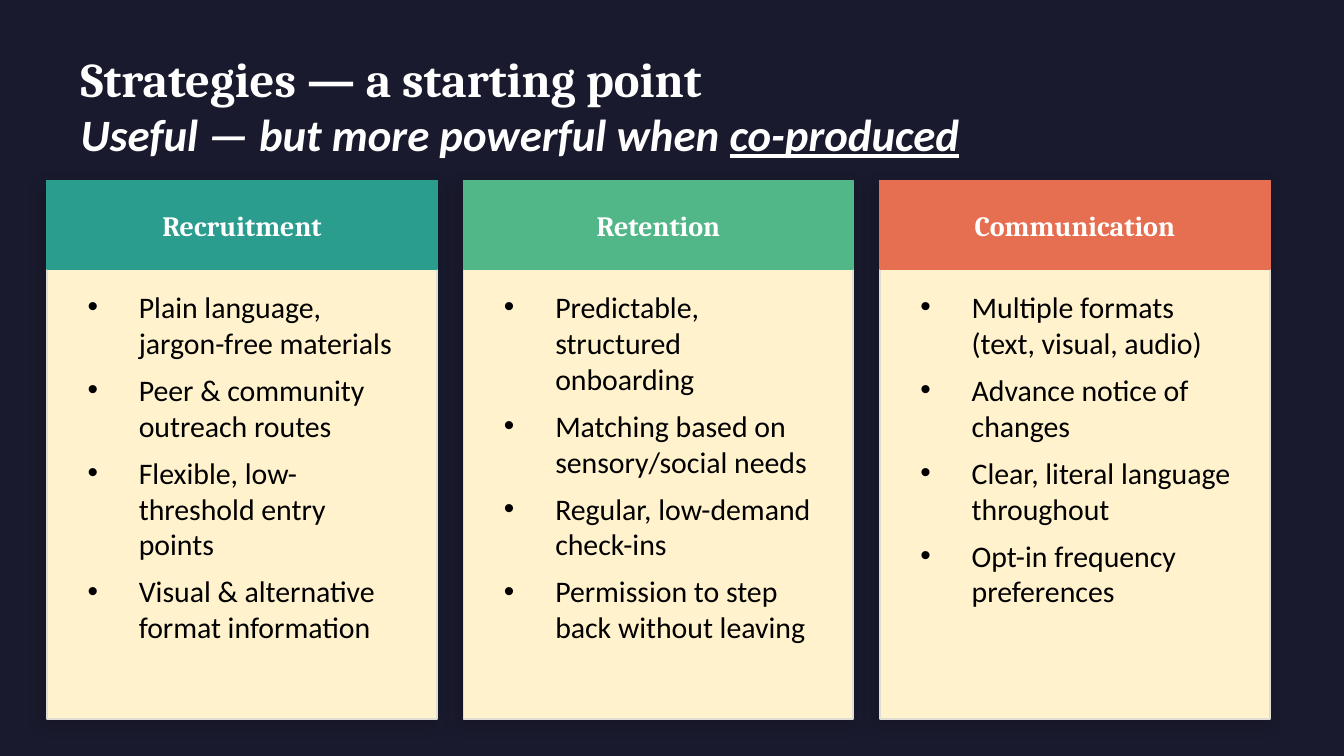
from lxml.etree import SubElement
from pptx import Presentation
from pptx.dml.color import RGBColor
from pptx.enum.shapes import MSO_SHAPE
from pptx.enum.text import MSO_ANCHOR as Anchor, MSO_AUTO_SIZE as AutoSize, PP_ALIGN as Align
from pptx.oxml.ns import qn
from pptx.util import Cm, Pt

STRATEGIES = [
    ("Recruitment", "2A9D8F", [
        "Plain language, jargon-free materials",
        "Peer & community outreach routes",
        "Flexible, low-threshold entry points",
        "Visual & alternative format information",
    ]),
    ("Retention", "52B788", [
        "Predictable, structured onboarding",
        "Matching based on sensory/social needs",
        "Regular, low-demand check-ins",
        "Permission to step back without leaving",
    ]),
    ("Communication", "E76F51", [
        "Multiple formats (text, visual, audio)",
        "Advance notice of changes",
        "Clear, literal language throughout",
        "Opt-in frequency preferences",
    ]),
]


def color(hex_code):
    return RGBColor.from_string(hex_code)


def write(paragraph, text, font="Calibri", size=16, ink="FFFFFF",
          bold=False, italic=False, underline=False, align=Align.LEFT, after=0):
    paragraph.alignment = align
    paragraph.space_before = Pt(0)
    paragraph.space_after = Pt(after)
    run = paragraph.add_run()
    run.text = text
    run.font.name = font
    run.font.size = Pt(size)
    run.font.color.rgb = color(ink)
    run.font.bold = bold
    run.font.italic = italic
    run.font.underline = underline


class StrategySlide:
    """Hold the style and the current slide, and add its elements."""

    heading_font = "Cambria"
    night, cream, edge, ink = "1A1A2E", "FFF2CC", "E0DDD4", "000000"

    def __init__(self, deck):
        self.slide = deck.slides.add_slide(deck.slide_layouts[4])
        self.slide.background.fill.solid()
        self.slide.background.fill.fore_color.rgb = color(self.night)

    def place(self, index, left, top, width, height, anchor):
        holder = next(p for p in self.slide.placeholders
                      if p.placeholder_format.idx == index)
        holder.left, holder.top = Cm(left), Cm(top)
        holder.width, holder.height = Cm(width), Cm(height)
        frame = holder.text_frame
        frame.word_wrap = True
        frame.auto_size = AutoSize.NONE
        frame.vertical_anchor = anchor
        return holder

    def title(self, text):
        holder = self.place(0, 1.27, 0.71, 22.86, 1.52, Anchor.MIDDLE)
        write(holder.text_frame.paragraphs[0], text,
              font=self.heading_font, size=26, bold=True)

    def subtitle(self, lead, stressed):
        holder = self.place(1, 1.27, 2.08, 22.86, 0.89, Anchor.MIDDLE)
        line = holder.text_frame.paragraphs[0]
        write(line, lead, size=24, bold=True, italic=True)
        write(line, stressed, size=24, bold=True, italic=True, underline=True)

    def panel(self, left, top, width, height, fill, outline):
        panel = self.slide.shapes.add_shape(
            MSO_SHAPE.RECTANGLE, Cm(left), Cm(top), Cm(width), Cm(height))
        panel.fill.solid()
        panel.fill.fore_color.rgb = color(fill)
        panel.line.color.rgb = color(outline)
        panel.line.width = Pt(1)
        panel.shadow.inherit = False
        return panel

    def soften(self, panel):
        effects = panel.element.spPr.find(qn("a:effectLst"))
        shadow = SubElement(effects, qn("a:outerShdw"), blurRad=str(Pt(8)),
                            dist=str(Pt(3)), dir="8100000", algn="bl", rotWithShape="0")
        tint = SubElement(shadow, qn("a:srgbClr"), val="000000")
        SubElement(tint, qn("a:alpha"), val="18000")

    def bullets(self, index, left, top, width, height, items):
        holder = self.place(index, left, top, width, height, Anchor.TOP)
        frame = holder.text_frame
        for number, item in enumerate(items):
            paragraph = frame.add_paragraph() if number else frame.paragraphs[0]
            write(paragraph, item, ink=self.ink, after=6)
            properties = paragraph._p.get_or_add_pPr()
            properties.set("marL", str(Cm(0.97)))
            properties.set("indent", str(-Cm(0.97)))
            SubElement(properties, qn("a:buFont"), typeface="Arial")
            SubElement(properties, qn("a:buChar"), char="•")
        holder.element.getparent().append(holder.element)

    def card(self, column, heading, accent, items):
        left, top, width = 0.89 + 7.87 * column, 3.43, 7.37
        self.soften(self.panel(left, top, width, 10.16, self.cream, self.edge))
        header = self.panel(left, top, width, 1.65, accent, accent)
        header.text_frame.word_wrap = True
        header.text_frame.vertical_anchor = Anchor.MIDDLE
        write(header.text_frame.paragraphs[0], heading, font=self.heading_font,
              size=15, bold=True, align=Align.CENTER)
        self.bullets(column + 2, left + 0.51, 5.33, 6.48, 7.87, items)


def main():
    deck = Presentation()
    deck.slide_width, deck.slide_height = Cm(25.4), Cm(14.29)
    page = StrategySlide(deck)
    page.title("Strategies — a starting point")
    page.subtitle("Useful — but more powerful when ", "co-produced")
    for column, (heading, accent, items) in enumerate(STRATEGIES):
        page.card(column, heading, accent, items)
    deck.save("out.pptx")


if __name__ == "__main__":
    main()
